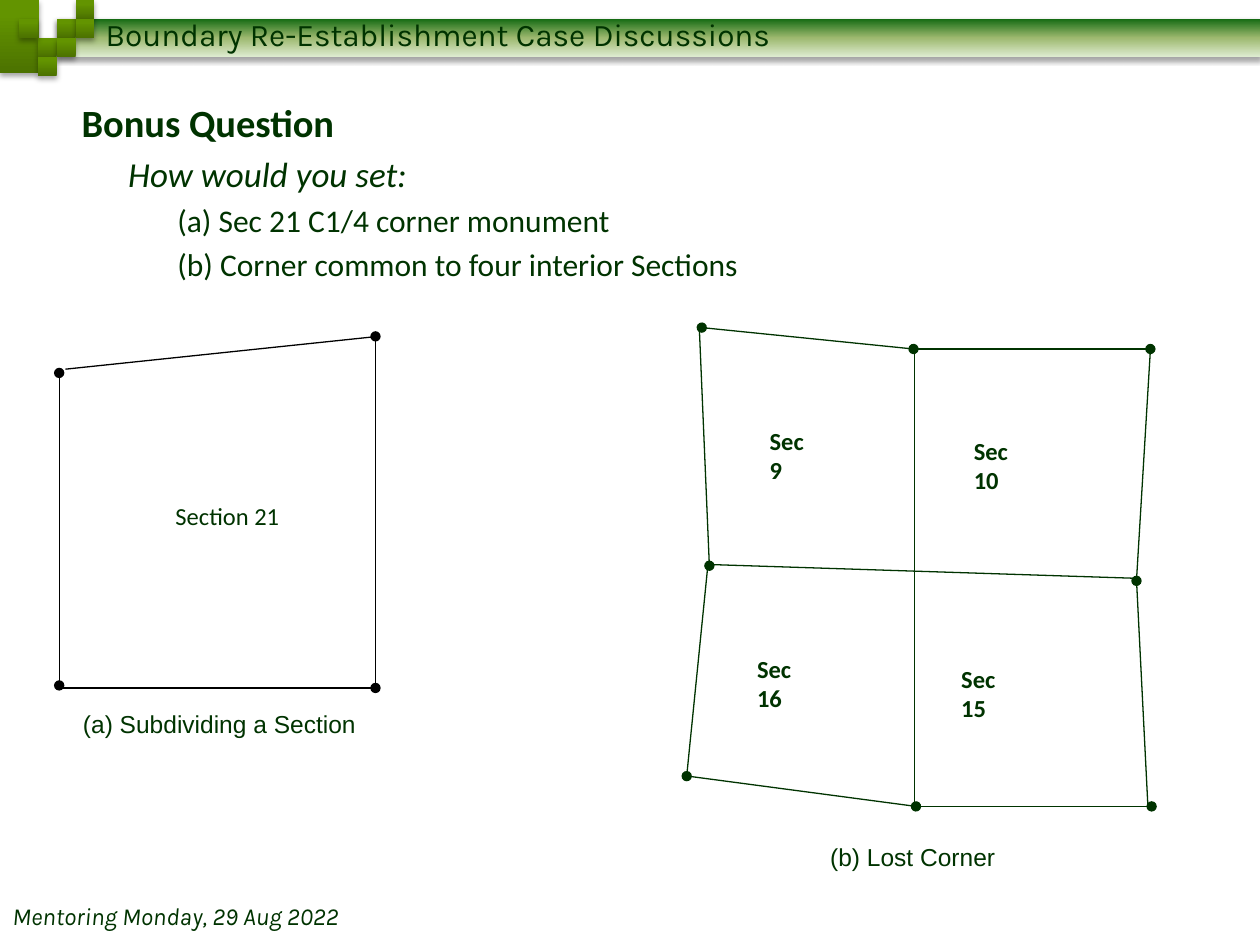
import pptx
import pptx.util
import pptx.dml.color
import pptx.enum.shapes
import pptx.enum.text
import pptx.oxml
import pptx.oxml.ns
import lxml.etree

Inch = pptx.util.Inches
Pt = pptx.util.Pt
RGB = pptx.dml.color.RGBColor
qn = pptx.oxml.ns.qn

INK = RGB(0x00, 0x33, 0x00)
BLACK = RGB(0, 0, 0)
LEAF = [(0, RGB(0x4C, 0x72, 0x00)), (80, RGB(0x63, 0x94, 0x00)),
        (100, RGB(0x63, 0x95, 0x00))]
FADE = [(0, RGB(0xDD, 0xEB, 0xCF)), (50, RGB(0x9C, 0xB8, 0x6E)),
        (100, RGB(0x15, 0x6B, 0x13))]

# Header: small squares as (column, row) on a grid of STEP inches
STEP = 0.15
TILES = [(3, 1), (4, 0), (4, 1), (2, 2), (1, 1), (3, 2), (2, 3)]

# Question: text, size, left indent, hang, bold, italic
BODY = [
    ("Bonus Question", 22, 0.19, 0.19, True, False),
    ("How would you set:", 20, 0.56, 0.19, False, True),
    ("(a) Sec 21 C1/4 corner monument", 18, 1, 0.24, False, False),
    ("(b) Corner common to four interior Sections", 18, 1, 0.24, False, False),
]

# Figures: start, end, dot at start, dot at end
SECTION = [
    ((0.52, 2.93), (3, 2.67), False, False),
    ((0.47, 2.96), (0.47, 5.44), True, True),
    ((2.98, 2.67), (2.98, 5.46), True, True),
    ((0.45, 5.46), (2.98, 5.46), False, False),
]
CORNER = [
    ((5.62, 4.48), (9.02, 4.59), False, False),
    ((7.26, 2.77), (7.26, 6.4), False, False),
    ((7.26, 2.77), (9.13, 2.77), False, True),
    ((7.28, 6.4), (9.14, 6.4), False, True),
    ((5.57, 2.6), (7.25, 2.77), True, True),
    ((5.46, 6.16), (7.27, 6.4), False, True),
    ((5.55, 2.6), (5.63, 4.49), False, True),
    ((5.62, 4.47), (5.45, 6.16), False, True),
    ((9.13, 2.78), (9.02, 4.61), False, True),
    ((9.02, 4.6), (9.11, 6.39), False, False),
]
SECS = [("Sec 9", 6.01, 3.33, 0.61), ("Sec 10", 7.63, 3.41, 0.71),
        ("Sec 16", 5.91, 5.14, 0.71), ("Sec 15", 7.53, 5.22, 0.71)]
NOTES = [("(a) Subdividing a Section", 0.56, 5.58, 2.38),
         ("(b) Lost Corner", 6.49, 6.63, 1.52)]

deck = pptx.Presentation()
deck.slide_width, deck.slide_height = Inch(10), Inch(7.5)
slide = deck.slides.add_slide(deck.slide_layouts[6])
parts = slide.shapes


def child(node, tag, **attrs):
    return lxml.etree.SubElement(node, qn(tag), attrs)


def block(x, y, wide, high, stops):
    box = parts.add_shape(pptx.enum.shapes.MSO_SHAPE.RECTANGLE,
                          Inch(x), Inch(y), Inch(wide), Inch(high))
    box.line.fill.background()
    props = box._element.spPr
    # Gradient that runs from bottom to top
    grad = pptx.oxml.parse_xml(
        f'<a:gradFill {pptx.oxml.ns.nsdecls("a")} rotWithShape="1"/>')
    rows = child(grad, "a:gsLst")
    for pos, color in stops:
        stop = child(rows, "a:gs", pos=str(pos * 1000))
        child(stop, "a:srgbClr", val=str(color))
    child(grad, "a:lin", ang="16200000", scaled="0")
    props.find(qn("a:ln")).addprevious(grad)
    # Soft shadow below
    glow = child(child(props, "a:effectLst"), "a:outerShdw",
                 blurRad=str(Pt(3.1)), dist=str(Pt(1.8)),
                 dir="5400000", rotWithShape="0")
    child(child(glow, "a:srgbClr", val="000000"), "a:alpha", val="35000")


def write(para, text, size, font, bold=False, slant=False):
    run = para.add_run()
    run.text = text
    face = run.font
    face.size, face.name = Pt(size), font
    face.bold, face.italic = bold, slant
    face.color.rgb = INK


def frame(x, y, wide, high=0.34, wrap=False):
    text = parts.add_textbox(Inch(x), Inch(y), Inch(wide), Inch(high)).text_frame
    text.word_wrap = wrap
    return text


def draw(rows, color):
    for start, end, head, tail in rows:
        line = parts.add_connector(pptx.enum.shapes.MSO_CONNECTOR.STRAIGHT,
                                   *map(Inch, start + end))
        line.line.color.rgb = color
        line.line.width = Pt(0.75)
        edge = line.line._get_or_add_ln()
        for tag, dot in (("a:headEnd", head), ("a:tailEnd", tail)):
            if dot:
                child(edge, tag, type="oval")
        child(line._element.spPr, "a:effectLst")


# Header and footer
block(0, 0, 0.31, 0.58, LEAF)
block(3 * STEP, STEP, 10 - 3 * STEP, 2 * STEP, FADE)
for col, row in TILES:
    block(col * STEP, row * STEP, STEP, STEP, LEAF)
write(frame(0.74, 0.07, 6.02, 0.4, True).paragraphs[0],
      "Boundary Re-Establishment Case Discussions", 18, "Karla")
write(frame(0, 7.1, 3.88, wrap=True).paragraphs[0],
      "Mentoring Monday, 29 Aug 2022", 14, "Karla", slant=True)

# Question
text = frame(0.55, 0.74, 9, 1.36, True)
for i, (words, size, left, hang, bold, slant) in enumerate(BODY):
    para = text.add_paragraph() if i else text.paragraphs[0]
    para.space_before = Pt(size * 0.2)
    para.level = min(i, 2)
    props = para._p.get_or_add_pPr()
    props.set("marL", str(Inch(left)))
    props.set("indent", str(-Inch(hang)))
    write(para, words, size, "Calibri", bold, slant)

# Figure (a)
draw(SECTION, BLACK)
para = frame(1.29, 3.93, 1.03).paragraphs[0]
para.alignment = pptx.enum.text.PP_ALIGN.CENTER
write(para, "Section 21", 14, "Calibri")

# Figure (b), each label narrow enough to break after "Sec"
draw(CORNER, INK)
for words, x, y, wide in SECS:
    text = frame(x, y, wide, wrap=True)
    text.margin_right = Inch(wide - 0.45)
    write(text.paragraphs[0], words, 14, "Calibri", bold=True)

# Captions
for words, x, y, wide in NOTES:
    write(frame(x, y, wide).paragraphs[0], words, 14, "Arial")

deck.save("out.pptx")
